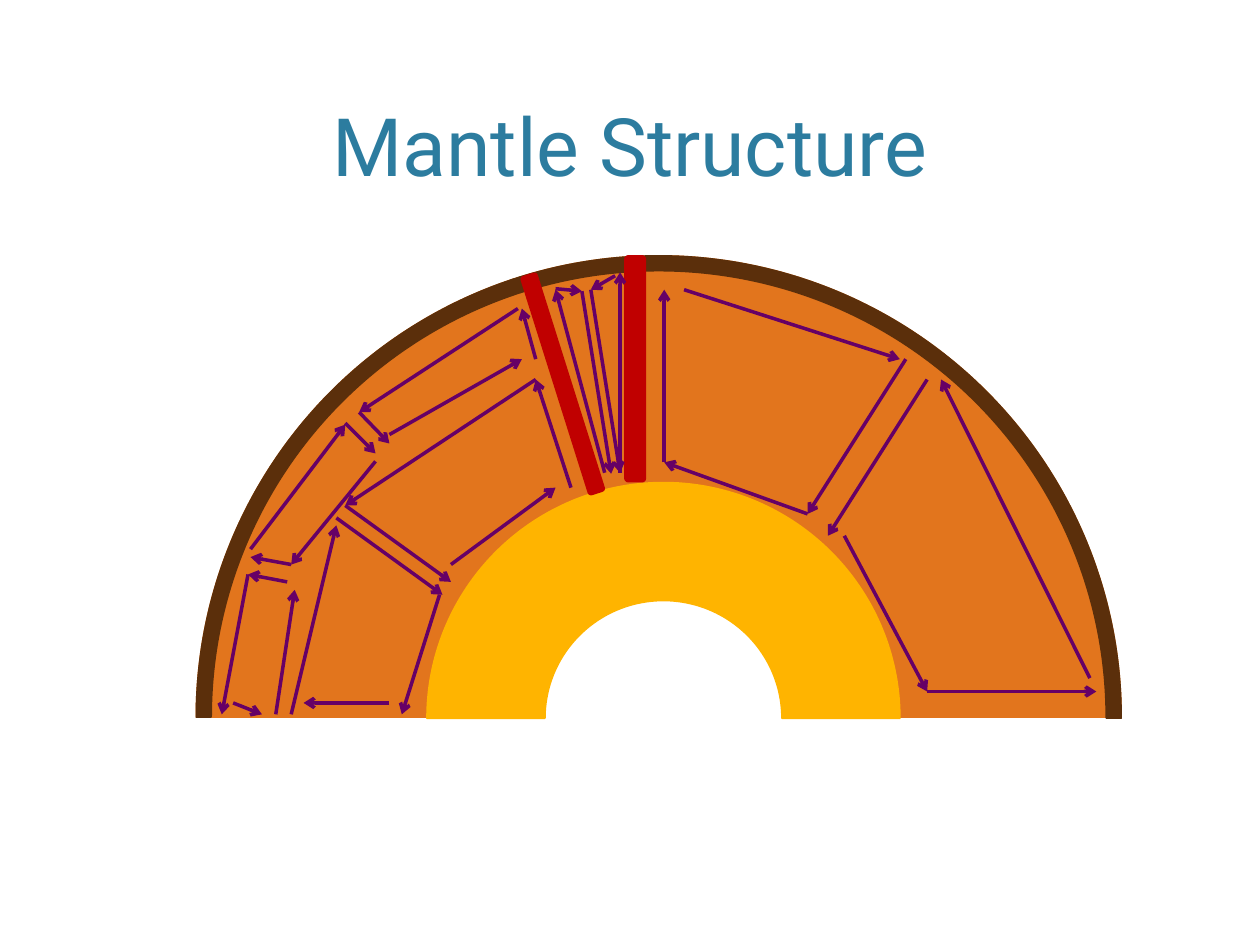
from lxml import etree
from pptx import Presentation
from pptx.dml.color import RGBColor
from pptx.enum.shapes import MSO_CONNECTOR, MSO_SHAPE
from pptx.enum.text import MSO_ANCHOR, PP_ALIGN
from pptx.oxml.ns import qn
from pptx.util import Cm, Pt

ARC = MSO_SHAPE.BLOCK_ARC
BAR = MSO_SHAPE.ROUNDED_RECTANGLE
STRAIGHT = MSO_CONNECTOR.STRAIGHT

MANTLE = RGBColor(0xE2, 0x75, 0x1D)
CORE = RGBColor(0xFF, 0xB4, 0x00)
CRUST = RGBColor(0x5B, 0x2F, 0x0B)
PLUME = RGBColor(0xC0, 0x00, 0x00)
FLOW = RGBColor(0x66, 0x00, 0x66)
TITLE_BLUE = RGBColor(0x2C, 0x7C, 0x9F)

TITLE = "Mantle Structure"
TITLE_BOX = (1.52, 0.3, 22.35, 3.71)

# All positions are in centimetres: left, top, width, height
EARTH = (3.96, 5.16, 18.64, 18.59)
LAYERS = [
    # preset, box, colour, rotation, adjustments
    (ARC, EARTH, MANTLE, 0, ()),
    (ARC, (8.61, 9.73, 9.53, 9.5), CORE, 0, ()),
    (ARC, EARTH, CRUST, 0, (108, 0.08, 0.016)),
    (BAR, (11.18, 5.44, 0.33, 4.6), PLUME, 342.5, ()),
    (BAR, (12.6, 5.16, 0.41, 4.55), PLUME, 0, ()),
]

# Each current is a chain of points with an arrow between neighbours
CURRENTS = {
    "right, near plume": [
        [(13.39, 9.32), (13.39, 5.84)],
        [(13.79, 5.84), (18.14, 7.24)],
        [(18.26, 7.24), (16.28, 10.36), (13.39, 9.32)],
    ],
    "right, outer": [
        [(18.69, 7.65), (16.69, 10.8)],
        [(17.02, 10.8), (18.69, 13.94), (22.1, 13.94)],
        [(21.97, 13.67), (18.97, 7.65)],
    ],
    "left, upper mantle top": [
        [(10.8, 7.24), (10.52, 6.22)],
        [(10.44, 6.22), (7.24, 8.31), (7.85, 8.94)],
        [(7.85, 8.76), (10.52, 7.24)],
    ],
    "left, lower mantle top": [
        [(11.51, 9.83), (10.8, 7.65), (6.96, 10.19), (9.09, 11.73)],
        [(9.09, 11.38), (11.2, 9.83)],
    ],
    "left, upper mantle middle": [
        [(6.96, 8.53), (7.57, 9.14)],
        [(5.05, 11.07), (6.96, 8.56)],
        [(7.57, 9.3), (5.87, 11.38), (5.05, 11.23)],
    ],
    "left, lower mantle bottom": [
        [(6.78, 10.44), (8.92, 11.99)],
        [(5.87, 14.4), (6.78, 10.59)],
        [(8.86, 11.99), (8.1, 14.4)],
        [(7.85, 14.17), (6.12, 14.17)],
    ],
    "left, upper mantle bottom": [
        [(5.79, 11.73), (5, 11.58), (4.47, 14.4)],
        [(5.56, 14.4), (5.94, 11.89)],
        [(4.7, 14.17), (5.28, 14.4)],
    ],
    "between plumes": [
        [(12.5, 9.53), (12.5, 5.49)],
        [(12.4, 5.56), (11.91, 5.84), (12.5, 9.53)],
        [(12.19, 9.53), (11.2, 5.84)],
        [(11.2, 5.82), (11.73, 5.87), (12.32, 9.55)],
    ],
}


def cm(values):
    return [Cm(value) for value in values]


def add_layer(slide, preset, box, colour, rotation, adjustments):
    layer = slide.shapes.add_shape(preset, *cm(box))
    layer.shadow.inherit = False
    layer.rotation = rotation
    for index, value in enumerate(adjustments):
        layer.adjustments[index] = value
    layer.fill.solid()
    layer.fill.fore_color.rgb = colour
    layer.line.color.rgb = colour
    layer.line.width = Pt(1)


def add_arrow(slide, start, end):
    arrow = slide.shapes.add_connector(STRAIGHT, *cm(start + end))
    arrow.line.color.rgb = FLOW
    arrow.line.width = Pt(2)
    outline = arrow.line._get_or_add_ln()
    etree.SubElement(outline, qn("a:tailEnd"), type="arrow")
    etree.SubElement(arrow._element.spPr, qn("a:effectLst"))


def add_title(slide):
    frame = slide.shapes.add_textbox(*cm(TITLE_BOX)).text_frame
    frame.word_wrap = True
    frame.vertical_anchor = MSO_ANCHOR.BOTTOM
    paragraph = frame.paragraphs[0]
    paragraph.alignment = PP_ALIGN.CENTER
    run = paragraph.add_run()
    run.text = TITLE
    run.font.name = "Roboto"
    run.font.size = Pt(46)
    run.font.color.rgb = TITLE_BLUE


def main():
    deck = Presentation()
    deck.slide_width, deck.slide_height = Cm(25.4), Cm(19.05)
    slide = deck.slides.add_slide(deck.slide_layouts[6])
    for layer in LAYERS:
        add_layer(slide, *layer)
    for chains in CURRENTS.values():
        for chain in chains:
            for start, end in zip(chain, chain[1:]):
                add_arrow(slide, start, end)
    add_title(slide)
    deck.save("out.pptx")


if __name__ == "__main__":
    main()
